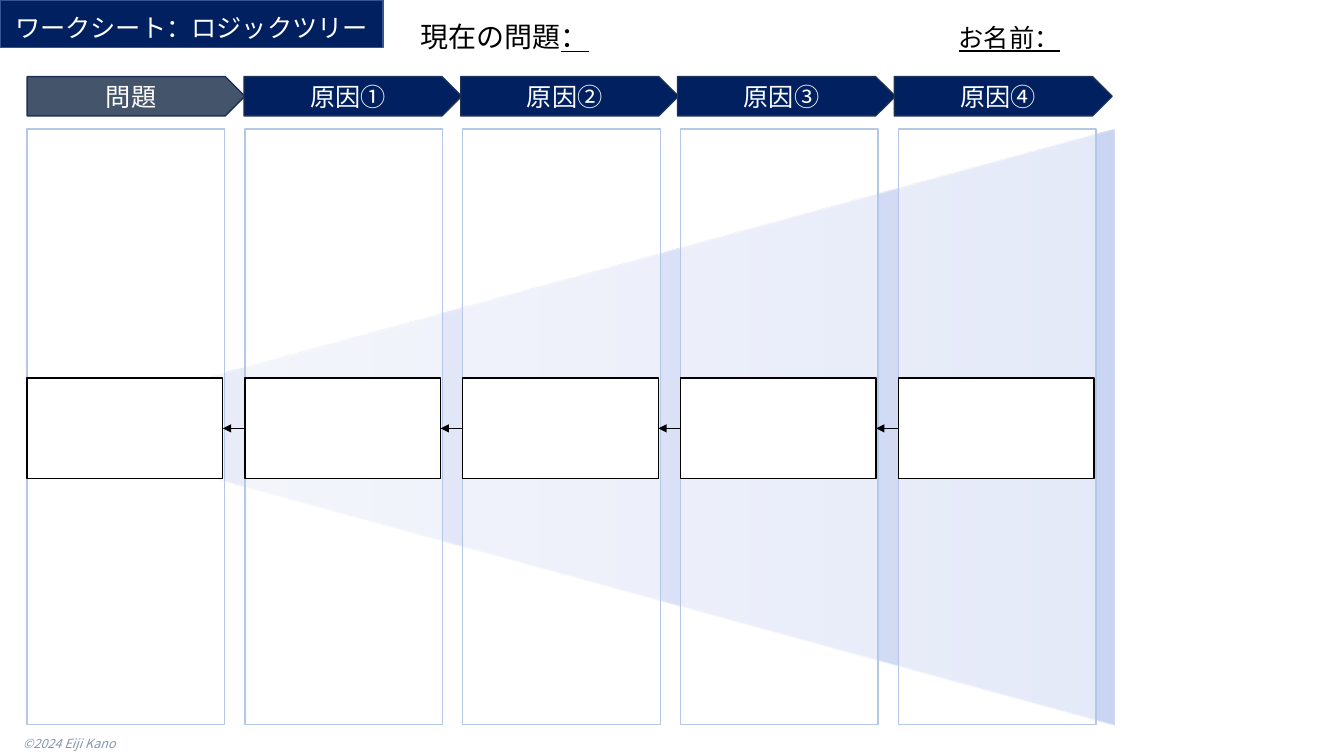
"""Build the logic tree worksheet slide: a problem traced back through four causes."""
from dataclasses import dataclass, field

from lxml import etree
from pptx import Presentation, util as u
from pptx.dml import color as dml
from pptx.enum import shapes, text
from pptx.oxml import ns
from pptx.shapes import autoshape, shapetree

FONT = "Noto Sans CJK JP"
COLORS = {
    "navy": "002060", "slate": "44546A", "chevron_edge": "1E3256", "title_edge": "325491",
    "panel_edge": "B4C7E7", "white": "FFFFFF", "black": "000000", "credit": "8497B0",
    "fan_base": "96ABEA", "fan_middle": "C0CBF0", "fan_tip": "E0E5F7",
}
STAGES = ("問題", "原因①", "原因②", "原因③", "原因④")
LEFT, PITCH, CHEVRON_PITCH = 0.27, 2.16, 2.15
PANEL_WIDTH, CARD_WIDTH, CHEVRON_WIDTH = 1.96, 1.94, 2.16
CARD_TOP, CARD_HEIGHT = 3.75, 1.0
SHAPE = shapes.MSO_SHAPE
CENTER = text.PP_ALIGN.CENTER


@dataclass(frozen=True)
class Area:
    left: float
    top: float
    width: float
    height: float

    def emu(self) -> tuple:
        return tuple(u.Inches(side) for side in (self.left, self.top, self.width, self.height))


@dataclass(frozen=True)
class Block:
    area: Area
    fill: str
    edge: str
    kind: SHAPE = SHAPE.RECTANGLE
    alpha: int = 100
    label: str = ""
    inset_top: float = 0.05


@dataclass(frozen=True)
class Caption:
    area: Area
    runs: tuple
    size: float
    color: str = "black"
    anchor: text.MSO_ANCHOR = text.MSO_ANCHOR.TOP
    spacing: float = 1.0
    style: dict = field(default_factory=dict)


def rgb(name: str) -> dml.RGBColor:
    return dml.RGBColor.from_string(COLORS[name])


def set_alpha(color_parent: etree._Element, percent: int) -> None:
    color = color_parent.find(".//" + ns.qn("a:srgbClr"))
    etree.SubElement(color, ns.qn("a:alpha"), val=str(percent * 1000))


def write_run(paragraph, words: str, size: float, color: str, style: dict) -> None:
    run = paragraph.add_run()
    run.text = words
    formats = {"name": FONT, "size": u.Pt(size), **style}
    for attribute, value in formats.items():
        setattr(run.font, attribute, value)
    run.font.color.rgb = rgb(color)
    etree.SubElement(run.font._element, ns.qn("a:ea"), typeface=FONT)


def draw_block(tree: shapetree.SlideShapes, block: Block) -> autoshape.Shape:
    shape = tree.add_shape(block.kind, *block.area.emu())
    shape.shadow.inherit = False
    shape.fill.solid()
    shape.fill.fore_color.rgb = rgb(block.fill)
    if block.alpha < 100:
        set_alpha(shape._element.spPr.find(ns.qn("a:solidFill")), block.alpha)
    shape.line.color.rgb = rgb(block.edge)
    shape.line.width = u.Pt(1)
    if block.label:
        frame = shape.text_frame
        frame.margin_top = u.Inches(block.inset_top)
        frame.vertical_anchor = text.MSO_ANCHOR.MIDDLE
        frame.paragraphs[0].alignment = CENTER
        write_run(frame.paragraphs[0], block.label, 18, "white", {})
    return shape


def draw_caption(tree: shapetree.SlideShapes, caption: Caption) -> None:
    frame = tree.add_textbox(*caption.area.emu()).text_frame
    frame.word_wrap = True
    frame.vertical_anchor = caption.anchor
    paragraph = frame.paragraphs[0]
    paragraph.line_spacing = caption.spacing
    for words, underline in caption.runs:
        style = {**caption.style, "underline": underline}
        write_run(paragraph, words, caption.size, caption.color, style)


def draw_fan(tree: shapetree.SlideShapes, area: Area) -> None:
    fan = tree.add_shape(SHAPE.ISOSCELES_TRIANGLE, *area.emu())
    fan.rotation = 270
    fan.shadow.inherit = False
    fan.line.fill.background()
    fan.fill.gradient()
    fan.fill.gradient_angle = 90
    stops = fan._element.spPr.find(".//" + ns.qn("a:gsLst"))
    for stop in list(stops):
        stops.remove(stop)
    for position, name in ((0, "fan_base"), (50, "fan_middle"), (100, "fan_tip")):
        stop = etree.SubElement(stops, ns.qn("a:gs"), pos=str(position * 1000))
        etree.SubElement(stop, ns.qn("a:srgbClr"), val=COLORS[name])
        set_alpha(stop, 50)


def draw_arrow(tree: shapetree.SlideShapes, effect_x: float, cause_x: float, y: float) -> None:
    ends = (u.Inches(side) for side in (effect_x, y, cause_x, y))
    arrow = tree.add_connector(shapes.MSO_CONNECTOR.STRAIGHT, *ends)
    arrow.line.color.rgb = rgb("black")
    arrow.line.width = u.Pt(0.5)
    etree.SubElement(arrow.line._get_or_add_ln(), ns.qn("a:headEnd"), type="triangle")
    etree.SubElement(arrow._element.spPr, ns.qn("a:effectLst"))


def main() -> None:
    deck = Presentation()
    deck.slide_width, deck.slide_height = u.Inches(13.33), u.Inches(7.5)
    tree = deck.slides.add_slide(deck.slide_layouts[6]).shapes
    columns = [LEFT + PITCH * index for index in range(len(STAGES))]

    draw_caption(tree, Caption(Area(0.13, 7.25, 1.36, 0.25), (("©2024 Eiji Kano", False),),
                               9, "credit", style={"italic": True}))
    draw_fan(tree, Area(2.71, -1.15, 5.91, 10.78))
    for left in columns:
        draw_block(tree, Block(Area(left, 1.28, PANEL_WIDTH, 5.91), "white", "panel_edge", alpha=50))
    for index, stage in enumerate(STAGES):
        area = Area(LEFT + CHEVRON_PITCH * index, 0.76, CHEVRON_WIDTH, 0.39)
        fill = "navy" if index else "slate"
        draw_block(tree, Block(area, fill, "chevron_edge", SHAPE.PENTAGON, label=stage))
    for left in columns:
        draw_block(tree, Block(Area(left, CARD_TOP, CARD_WIDTH, CARD_HEIGHT), "white", "black"))
    for effect, cause in zip(columns, columns[1:]):
        draw_arrow(tree, effect + CARD_WIDTH, cause, CARD_TOP + CARD_HEIGHT / 2)

    draw_caption(tree, Caption(Area(4.07, 0.13, 6.04, 0.5), (("現在の問題", False), ("：", True)),
                               20, anchor=text.MSO_ANCHOR.MIDDLE, spacing=0.9))
    draw_caption(tree, Caption(Area(9.41, 0.17, 2.22, 0.4), (("お名前：", True),), 18))
    draw_block(tree, Block(Area(0, 0, 3.8, 0.47), "navy", "title_edge",
                           label="ワークシート：ロジックツリー", inset_top=0.12))
    deck.save("out.pptx")


if __name__ == "__main__":
    main()
